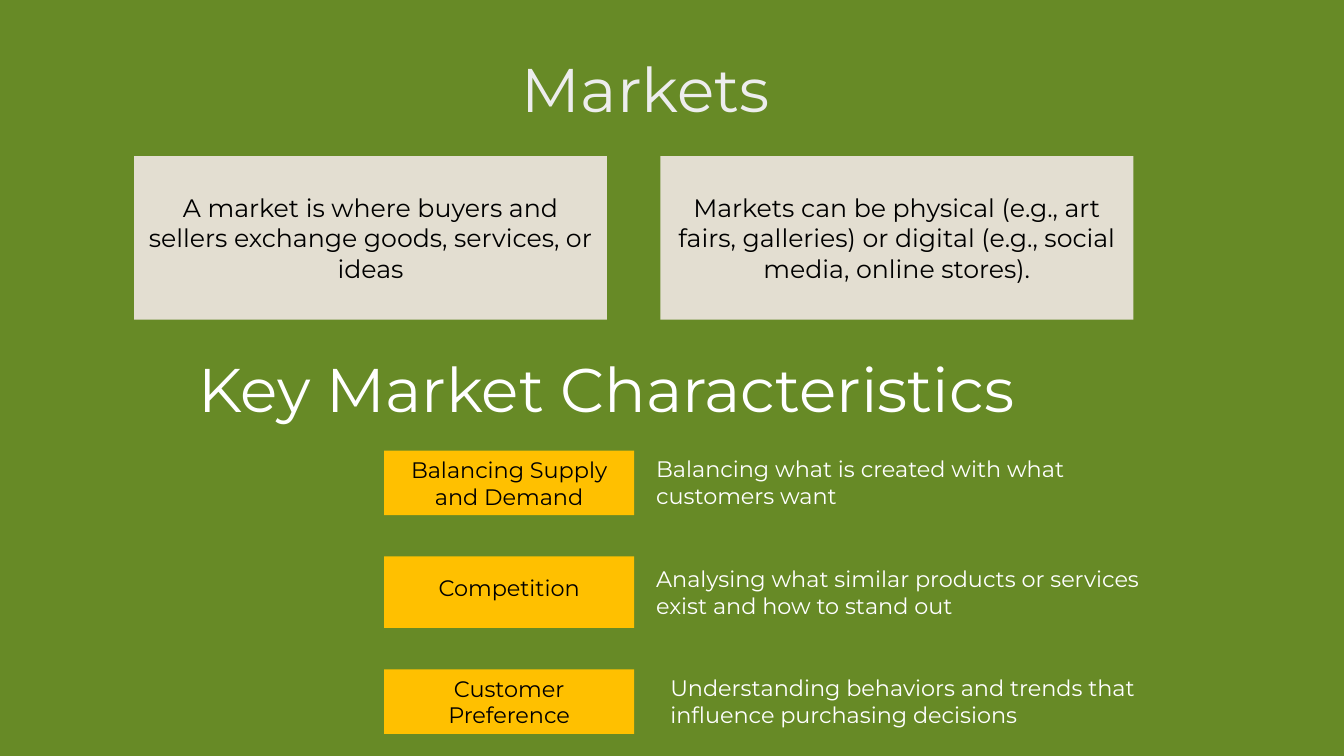
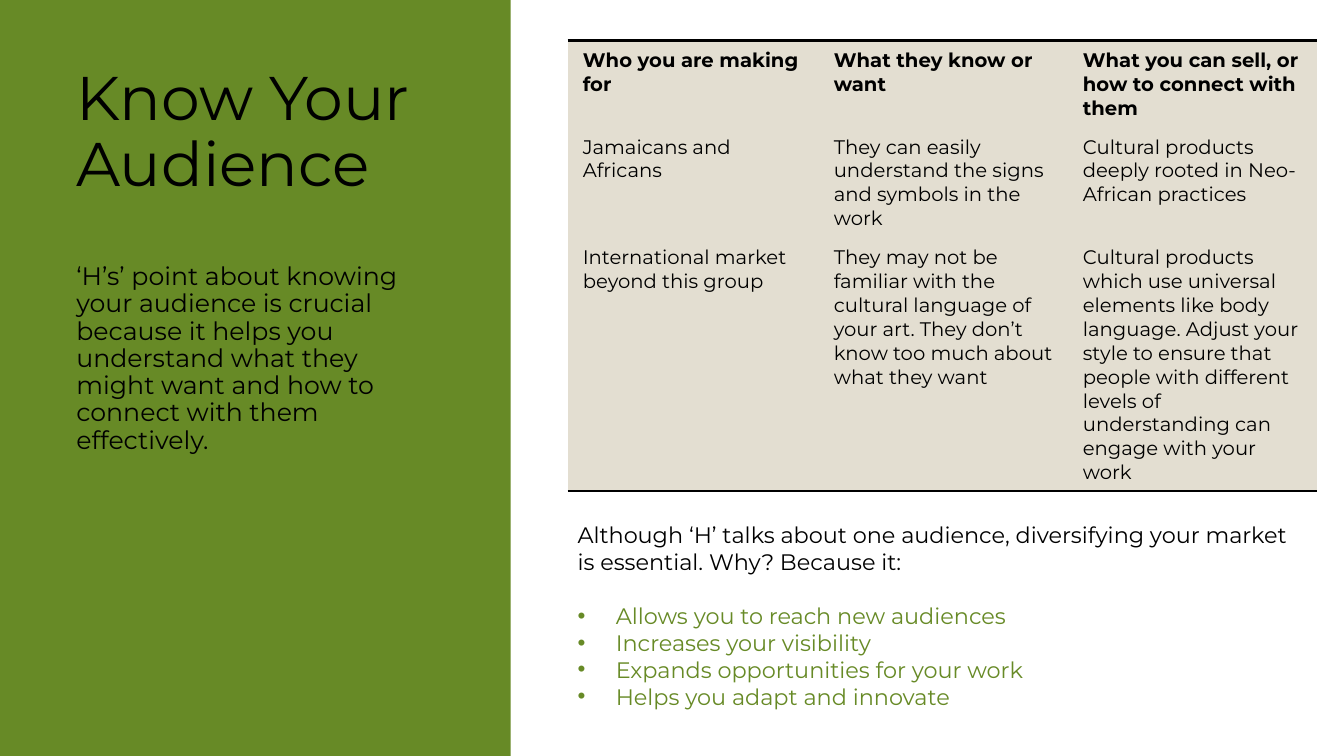
from lxml import etree
from pptx import Presentation
from pptx.dml.color import RGBColor
from pptx.enum.shapes import MSO_SHAPE as Shape
from pptx.enum.text import MSO_ANCHOR as Anchor, PP_ALIGN as Align
from pptx.oxml.ns import qn
from pptx.util import Inches, Pt

FONT = "Montserrat"
COLORS = {
    "green": "678A26",
    "sand": "E3DED1",
    "amber": "FFC000",
    "pale": "EDEDED",
    "white": "FFFFFF",
    "black": "000000",
}
SLIDE_WIDTH, SLIDE_HEIGHT = 13.33, 7.5
TITLE = dict(size=44, spacing=0.9, anchor=Anchor.MIDDLE)

MARKET_FACTS = [
    "A market is where buyers and sellers exchange goods, services, or ideas",
    "Markets can be physical (e.g., art fairs, galleries) or digital "
    "(e.g., social media, online stores).",
]
CHARACTERISTICS = [
    dict(label="Balancing Supply and Demand", height=0.64, indent=0, lift=0,
         lines=["Balancing what is created with what", "customers want"]),
    dict(label="Competition", height=0.71, indent=0, lift=0.1,
         lines=["Analysing what similar products or services",
                "exist and how to stand out"]),
    dict(label="Customer Preference", height=0.64, indent=0.14, lift=0,
         lines=["Understanding behaviors and trends that",
                "influence purchasing decisions"]),
]
AUDIENCE_POINT = (
    "‘H’s’ point about knowing your audience is crucial because it helps you "
    "understand what they might want and how to connect with them effectively."
)
AUDIENCE_ROWS = [
    ["Who you are making for", "What they know or want",
     "What you can sell, or how to connect with them"],
    ["Jamaicans and Africans",
     "They can easily understand the signs and symbols in the work",
     "Cultural products deeply rooted in Neo-African practices"],
    ["International market beyond this group",
     "They may not be familiar with the cultural language of your art. "
     "They don’t know too much about what they want",
     "Cultural products which use universal elements like body language. "
     "Adjust your style to ensure that people with different levels of "
     "understanding can engage with your work"],
]
COLUMN_WIDTHS = [2.49, 2.47, 2.47]
ROW_HEIGHTS = [0.86, 1.1, 2.51]
DIVERSIFY_INTRO = (
    "Although ‘H’ talks about one audience, diversifying your market is "
    "essential. Why? Because it:"
)
DIVERSIFY_REASONS = [
    "Allows you to reach new audiences",
    "Increases your visibility",
    "Expands opportunities for your work",
    "Helps you adapt and innovate",
]


def rgb(name):
    return RGBColor.from_string(COLORS[name])


def write(frame, lines, size=16, color="black", bold=False, align=Align.LEFT,
          anchor=Anchor.TOP, spacing=None):
    frame.word_wrap = True
    frame.vertical_anchor = anchor
    lines = [lines] if isinstance(lines, str) else lines
    for index, line in enumerate(lines):
        paragraph = frame.paragraphs[0] if index == 0 else frame.add_paragraph()
        paragraph.alignment = align
        if spacing:
            paragraph.line_spacing = spacing
        run = paragraph.add_run()
        run.text = line
        run.font.name = FONT
        run.font.size = Pt(size)
        run.font.bold = bold
        run.font.color.rgb = rgb(color)
    return frame


def add_text(slide, box, lines, **text_format):
    shape = slide.shapes.add_textbox(*map(Inches, box))
    return write(shape.text_frame, lines, **text_format)


def add_panel(slide, box, fill, lines=(), **text_format):
    shape = slide.shapes.add_shape(Shape.RECTANGLE, *map(Inches, box))
    shape.shadow.inherit = False
    shape.fill.solid()
    shape.fill.fore_color.rgb = rgb(fill)
    shape.line.fill.background()
    return write(shape.text_frame, lines, align=Align.CENTER,
                 anchor=Anchor.MIDDLE, **text_format)


def add_slide(presentation, background):
    slide = presentation.slides.add_slide(presentation.slide_layouts[6])
    fill = slide.background.fill
    fill.solid()
    fill.fore_color.rgb = rgb(background)
    return slide


def add_bullet(paragraph):
    properties = paragraph._p.get_or_add_pPr()
    indent = Inches(0.38)
    properties.set("marL", str(indent))
    properties.set("indent", str(-indent))
    etree.SubElement(properties, qn("a:buFont")).set("typeface", "Arial")
    etree.SubElement(properties, qn("a:buChar")).set("char", "•")


def set_borders(cell, ruled_sides):
    properties = cell._tc.get_or_add_tcPr()
    for index, side in enumerate(["lnL", "lnR", "lnT", "lnB"]):
        line = etree.Element(qn(f"a:{side}"), w=str(Pt(2)))
        if side in ruled_sides:
            fill = etree.SubElement(line, qn("a:solidFill"))
            etree.SubElement(fill, qn("a:srgbClr")).set("val", COLORS["black"])
        else:
            etree.SubElement(line, qn("a:noFill"))
        properties.insert(index, line)


def add_audience_table(slide, left, top):
    frame = slide.shapes.add_table(
        len(ROW_HEIGHTS), len(COLUMN_WIDTHS), Inches(left), Inches(top),
        Inches(sum(COLUMN_WIDTHS)), Inches(sum(ROW_HEIGHTS)))
    table = frame.table
    table.first_row = table.horz_banding = False
    for column, width in zip(table.columns, COLUMN_WIDTHS):
        column.width = Inches(width)
    last_row = len(ROW_HEIGHTS) - 1
    for row_index, texts in enumerate(AUDIENCE_ROWS):
        table.rows[row_index].height = Inches(ROW_HEIGHTS[row_index])
        ruled_sides = {0: ["lnT"], last_row: ["lnB"]}.get(row_index, [])
        for column_index, text in enumerate(texts):
            cell = table.cell(row_index, column_index)
            cell.margin_left = cell.margin_right = Inches(0.15)
            cell.margin_top = cell.margin_bottom = Inches(0.08)
            cell.fill.solid()
            cell.fill.fore_color.rgb = rgb("sand")
            write(cell.text_frame, text, size=14, bold=row_index == 0)
            set_borders(cell, ruled_sides)


def build_markets(presentation):
    slide = add_slide(presentation, "green")
    add_text(slide, (4.88, 0.4, 3.05, 1.03), "Markets", color="pale",
             align=Align.CENTER, **TITLE)
    fact_width, fact_gap = 4.69, 0.53
    for index, fact in enumerate(MARKET_FACTS):
        left = 1.33 + index * (fact_width + fact_gap)
        add_panel(slide, (left, 1.55, fact_width, 1.62), "sand", fact, size=18)
    add_text(slide, (0.42, 3.46, 11.19, 0.87), "Key Market Characteristics",
             color="white", align=Align.CENTER, **TITLE)

    label_left, label_width, top, row_gap = 3.81, 2.48, 4.47, 0.41
    text_left, text_height = label_left + label_width + 0.12, 0.64
    for item in CHARACTERISTICS:
        height = item["height"]
        label = add_panel(slide, (label_left, top, label_width, height),
                          "amber", item["label"])
        label.margin_bottom += Inches(item["lift"])
        text_top = top + (height - text_height) / 2
        add_text(slide, (text_left + item["indent"], text_top, 5.66, text_height),
                 item["lines"], color="white")
        top += height + row_gap


def build_audience(presentation):
    slide = add_slide(presentation, "white")
    add_panel(slide, (0, 0, SLIDE_WIDTH * 0.38, SLIDE_HEIGHT), "green")
    add_text(slide, (0.66, 0.6, 3.76, 1.45), "Know Your Audience", **TITLE)
    add_text(slide, (0.66, 2.57, 3.54, 3.17), AUDIENCE_POINT, size=18, spacing=0.9)
    content_left = 5.63
    add_audience_table(slide, content_left, 0.4)
    frame = add_text(slide, (content_left, 5.12, sum(COLUMN_WIDTHS), 1.99),
                     [DIVERSIFY_INTRO, *DIVERSIFY_REASONS])
    reasons = frame.paragraphs[1:]
    reasons[0].space_before = Pt(19.5)
    for paragraph in reasons:
        paragraph.runs[0].font.color.rgb = rgb("green")
        add_bullet(paragraph)


def main():
    presentation = Presentation()
    presentation.slide_width = Inches(SLIDE_WIDTH)
    presentation.slide_height = Inches(SLIDE_HEIGHT)
    build_markets(presentation)
    build_audience(presentation)
    presentation.save("out.pptx")


if __name__ == "__main__":
    main()
